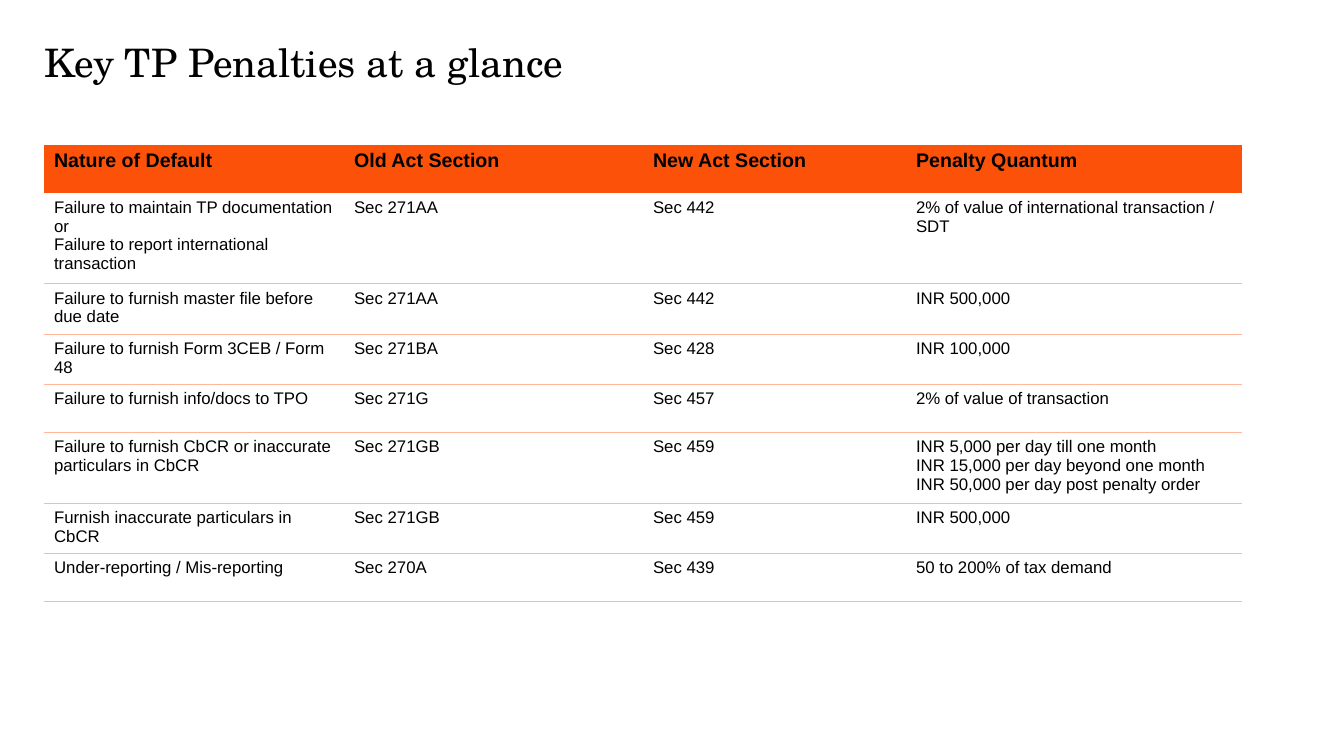
from dataclasses import dataclass

import lxml.etree
import pptx
import pptx.dml.color
import pptx.oxml.ns
import pptx.slide
import pptx.table
import pptx.text.text
import pptx.util

EMU_PER_PX = 914400 / 100.8
LEFT = 44
ROW_HEIGHT = 48
COLUMN_WIDTHS = (300, 299, 263, 336)
BLACK = "000000"
ORANGE = "FC5108"
PEACH = "FFB89A"
GREY = "CACACA"
NO_STYLE = "{2D5ABB26-0587-4C30-8999-92F81FD0307C}"
HEADINGS = ("Nature of Default", "Old Act Section", "New Act Section", "Penalty Quantum")


@dataclass(frozen=True)
class Penalty:
    default: str
    old_section: str
    new_section: str
    quantum: str
    rule: str = PEACH


PENALTIES = (
    Penalty("Failure to maintain TP documentation or\nFailure to report international transaction",
            "Sec 271AA", "Sec 442", "2% of value of international transaction / SDT"),
    Penalty("Failure to furnish master file before due date", "Sec 271AA", "Sec 442", "INR 500,000"),
    Penalty("Failure to furnish Form 3CEB / Form 48", "Sec 271BA", "Sec 428", "INR 100,000"),
    Penalty("Failure to furnish info/docs to TPO", "Sec 271G", "Sec 457", "2% of value of transaction"),
    Penalty("Failure to furnish CbCR or inaccurate particulars in CbCR", "Sec 271GB", "Sec 459",
            "INR 5,000 per day till one month\nINR 15,000 per day beyond one month\n"
            "INR 50,000 per day post penalty order", GREY),
    Penalty("Furnish inaccurate particulars in CbCR", "Sec 271GB", "Sec 459", "INR 500,000", GREY),
    Penalty("Under-reporting / Mis-reporting", "Sec 270A", "Sec 439", "50 to 200% of tax demand", GREY),
)


def px(length: int) -> pptx.util.Emu:
    return pptx.util.Emu(round(length * EMU_PER_PX))


def color(value: str) -> pptx.dml.color.RGBColor:
    return pptx.dml.color.RGBColor.from_string(value)


def write(frame: pptx.text.text.TextFrame, text: str, size: int, font: str, bold: bool = False) -> None:
    frame.text = text
    for para in frame.paragraphs:
        for span in para.runs:
            span.font.size = pptx.util.Pt(size)
            span.font.name = font
            span.font.bold = bold
            span.font.color.rgb = color(BLACK)


def rule_below(cell: pptx.table._Cell, value: str) -> None:
    name = pptx.oxml.ns.qn
    line = lxml.etree.Element(name("a:lnB"), w=str(pptx.util.Pt(1)))
    fill = lxml.etree.SubElement(line, name("a:solidFill"))
    lxml.etree.SubElement(fill, name("a:srgbClr"), val=value)
    cell._tc.get_or_add_tcPr().insert(0, line)


def add_title(page: pptx.slide.Slide) -> None:
    box = page.shapes.add_textbox(px(LEFT), px(44), px(1231), px(101))
    frame = box.text_frame
    frame.word_wrap = True
    frame.margin_left = frame.margin_right = frame.margin_top = frame.margin_bottom = 0
    write(frame, "Key TP Penalties at a glance", 28, "TeX Gyre Schola")
    frame.paragraphs[0].line_spacing = 0.9


def add_penalty_table(page: pptx.slide.Slide) -> None:
    row_count = len(PENALTIES) + 1
    holder = page.shapes.add_table(row_count, len(HEADINGS), px(LEFT), px(145),
                                   px(sum(COLUMN_WIDTHS)), px(ROW_HEIGHT * row_count))
    table = holder.table
    table.horz_banding = False
    table._tbl.tblPr.find(pptx.oxml.ns.qn("a:tableStyleId")).text = NO_STYLE
    for column, width in zip(table.columns, COLUMN_WIDTHS):
        column.width = px(width)
    for row in table.rows:
        row.height = px(ROW_HEIGHT)

    # Header row
    for index, heading in enumerate(HEADINGS):
        cell = table.cell(0, index)
        cell.fill.solid()
        cell.fill.fore_color.rgb = color(ORANGE)
        write(cell.text_frame, heading, 14, "Arial", bold=True)

    # One row per penalty, with a rule below it
    for number, penalty in enumerate(PENALTIES, start=1):
        texts = (penalty.default, penalty.old_section, penalty.new_section, penalty.quantum)
        for index, text in enumerate(texts):
            cell = table.cell(number, index)
            cell.fill.background()
            write(cell.text_frame, text, 12, "Arial")
            rule_below(cell, penalty.rule)


def main() -> None:
    deck = pptx.Presentation()
    deck.slide_width = px(1344)
    deck.slide_height = px(756)
    page = deck.slides.add_slide(deck.slide_layouts[6])
    add_title(page)
    add_penalty_table(page)
    deck.save("out.pptx")


if __name__ == "__main__":
    main()
